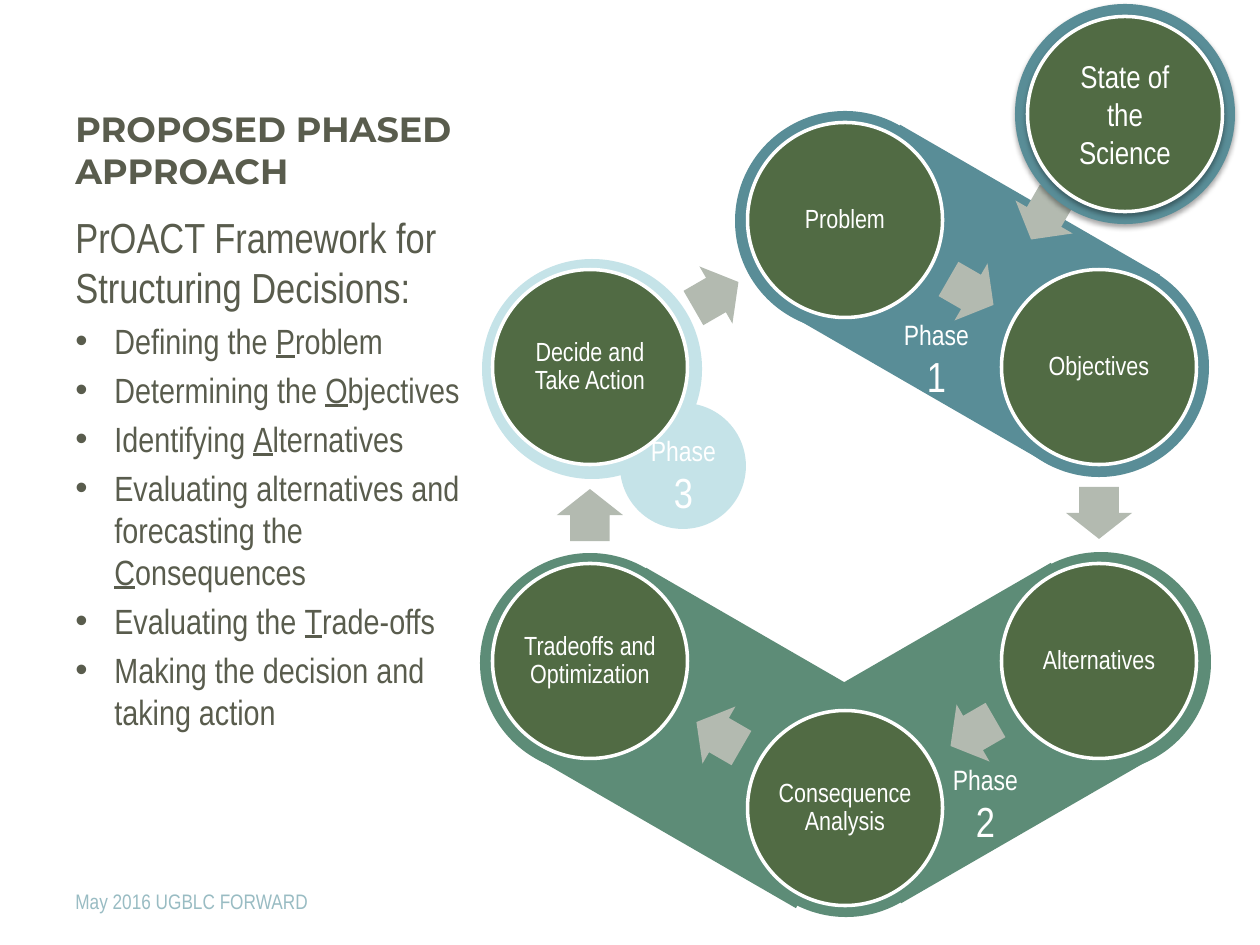
from dataclasses import dataclass

from lxml import etree
from pptx import Presentation
from pptx.dml.color import RGBColor
from pptx.enum.shapes import MSO_SHAPE
from pptx.enum.text import MSO_ANCHOR, MSO_AUTO_SIZE, PP_ALIGN
from pptx.oxml.ns import qn
from pptx.util import Emu, Pt

OVAL, RECT, ARROW = MSO_SHAPE.OVAL, MSO_SHAPE.RECTANGLE, MSO_SHAPE.RIGHT_ARROW
TOP, MIDDLE, BOTTOM = MSO_ANCHOR.TOP, MSO_ANCHOR.MIDDLE, MSO_ANCHOR.BOTTOM
LEFT, CENTER = PP_ALIGN.LEFT, PP_ALIGN.CENTER
FIT_SHAPE = MSO_AUTO_SIZE.SHAPE_TO_FIT_TEXT

PX = 914400 / 126
COLORS = {
    "ink": "595C4D", "footer": "99BCC3", "white": "FFFFFF", "step": "516B44",
    "arrow": "B3BAB0", "phase1": "598D97", "phase2": "5D8C77", "phase3": "C5E3E8",
}
BODY_FONT, TITLE_FONT = "Arial Narrow", "Montserrat"
STEP_SIZE, HALO_SIZE, BUBBLE_SIZE = 195, 220, 126
BAND_LENGTH = 300
ARROW_WIDTH, ARROW_HEIGHT = 52, 66
LABEL_WIDTH, LABEL_HEIGHT = 91, 97
BULLET_INDENT = 39


@dataclass(frozen=True)
class Paragraph:
    """Runs at odd positions are underlined."""
    runs: tuple[str, ...]
    size: int
    bullet: bool = False
    before: float = 0


@dataclass(frozen=True)
class Piece:
    """A plain shape placed by its centre."""
    kind: int
    x: int
    y: int
    width: int
    height: int
    color: str
    angle: int = 0


@dataclass(frozen=True)
class Step:
    text: str
    x: int
    y: int


@dataclass(frozen=True)
class PhaseLabel:
    number: str
    x: int
    y: int


def halo(x: int, y: int, color: str, size: int = HALO_SIZE) -> Piece:
    return Piece(OVAL, x, y, size, size, color)


def band(x: int, y: int, color: str, angle: int) -> Piece:
    return Piece(RECT, x, y, BAND_LENGTH, HALO_SIZE, color, angle)


def arrow(x: int, y: int, angle: int) -> Piece:
    return Piece(ARROW, x, y, ARROW_WIDTH, ARROW_HEIGHT, "arrow", angle)


PHASE_BACKDROPS = [
    halo(683, 466, "phase3", BUBBLE_SIZE),
    band(976, 733, "phase2", 150),
    halo(1101, 662, "phase2"),
    halo(846, 807, "phase2"),
    band(975, 295, "phase1", 30),
    halo(1099, 367, "phase1"),
    halo(845, 221, "phase1"),
    band(721, 738, "phase2", 30),
    halo(590, 663, "phase2"),
    halo(592, 369, "phase3"),
]
PHASE_LABELS = [
    PhaseLabel("1", 936, 359),
    PhaseLabel("2", 985, 804),
    PhaseLabel("3", 683, 475),
]
SCIENCE = Step("State of the Science", 1125, 114)
SCIENCE_ARROW = arrow(1044, 217, 120)
STEPS = [
    Step("Problem", 845, 220),
    Step("Objectives", 1099, 367),
    Step("Alternatives", 1099, 661),
    Step("Consequence Analysis", 845, 808),
    Step("Tradeoffs and Optimization", 590, 661),
    Step("Decide and Take Action", 590, 367),
]
STEP_ARROWS = [
    arrow(971, 292, 30), arrow(1099, 513, 90), arrow(973, 733, 150),
    arrow(719, 735, 210), arrow(590, 515, 270), arrow(716, 295, 330),
]
FRAMEWORK = [
    ("Defining the ", "P", "roblem"),
    ("Determining the ", "O", "bjectives"),
    ("Identifying ", "A", "lternatives"),
    ("Evaluating alternatives and forecasting the ", "C", "onsequences"),
    ("Evaluating the ", "T", "rade-offs"),
    ("Making the decision and taking action",),
]


def px(length: float) -> Emu:
    return Emu(round(length * PX))


def rgb(color: str) -> RGBColor:
    return RGBColor.from_string(COLORS[color])


def write_text(frame, paragraphs: list[Paragraph], *, color: str = "white",
               font: str = BODY_FONT, bold: bool = False, align=CENTER,
               anchor=MIDDLE, wrap: bool = True, inset: int | None = None,
               line_spacing: float | None = None) -> None:
    frame.word_wrap = wrap
    frame.vertical_anchor = anchor
    if inset is not None:
        frame.margin_left = frame.margin_right = px(inset)
        frame.margin_top = frame.margin_bottom = px(inset)
    for index, content in enumerate(paragraphs):
        paragraph = frame.add_paragraph() if index else frame.paragraphs[0]
        paragraph.alignment = align
        paragraph.space_before = Pt(content.before)
        if line_spacing:
            paragraph.line_spacing = line_spacing
        if content.bullet:
            properties = paragraph._p.get_or_add_pPr()
            properties.set("marL", str(px(BULLET_INDENT)))
            properties.set("indent", str(-px(BULLET_INDENT)))
            etree.SubElement(properties, qn("a:buFont"), typeface="Arial")
            etree.SubElement(properties, qn("a:buChar"), char="•")
        for position, text in enumerate(content.runs):
            run = paragraph.add_run()
            run.text = text
            run.font.name, run.font.size, run.font.bold = font, Pt(content.size), bold
            run.font.color.rgb = rgb(color)
            if position % 2:
                run.font.underline = True


def add_box(slide, left: int, top: int, width: int, height: int,
            paragraphs: list[Paragraph], **text_format):
    box = slide.shapes.add_textbox(px(left), px(top), px(width), px(height))
    write_text(box.text_frame, paragraphs, **text_format)
    return box


def draw_piece(slide, piece: Piece):
    shape = slide.shapes.add_shape(
        piece.kind, px(piece.x - piece.width / 2), px(piece.y - piece.height / 2),
        px(piece.width), px(piece.height))
    shape.shadow.inherit = False
    shape.fill.solid()
    shape.fill.fore_color.rgb = rgb(piece.color)
    shape.line.fill.background()
    shape.rotation = piece.angle
    if piece.kind == ARROW:
        shape.adjustments[0], shape.adjustments[1] = 0.6, 0.5
    return shape


def draw_step(slide, step: Step, size: int = 15, **text_format):
    circle = draw_piece(slide, halo(step.x, step.y, "step", STEP_SIZE))
    circle.line.color.rgb = rgb("white")
    circle.line.width = Pt(2)
    write_text(circle.text_frame, [Paragraph((step.text,), size)], **text_format)
    return circle


def add_shadow(shape) -> None:
    effects = shape._element.spPr.find(qn("a:effectLst"))
    shadow = etree.SubElement(effects, qn("a:outerShdw"), blurRad=str(Pt(3.1)),
                              dist=str(Pt(1.8)), dir="5400000", rotWithShape="0")
    black = etree.SubElement(shadow, qn("a:srgbClr"), val="000000")
    etree.SubElement(black, qn("a:alpha"), val="35000")


def main() -> None:
    deck = Presentation()
    deck.slide_width, deck.slide_height = px(1260), px(945)
    slide = deck.slides.add_slide(deck.slide_layouts[6])

    for backdrop in PHASE_BACKDROPS:
        draw_piece(slide, backdrop)

    add_box(slide, 63, 38, 415, 160, [Paragraph(("PROPOSED PHASED APPROACH",), 20)],
            color="ink", font=TITLE_FONT, bold=True, align=LEFT, anchor=BOTTOM)
    framework = [Paragraph(("PrOACT Framework for Structuring Decisions:",), 24)]
    framework += [Paragraph(runs, 20, bullet=True, before=4) for runs in FRAMEWORK]
    add_box(slide, 63, 205, 415, 646, framework, color="ink", align=LEFT, anchor=TOP)
    add_box(slide, 63, 876, 399, 50, [Paragraph(("May 2016 UGBLC FORWARD",), 12)],
            color="footer", align=LEFT)

    for label in PHASE_LABELS:
        box = add_box(slide, label.x - LABEL_WIDTH // 2, label.y - LABEL_HEIGHT // 2,
                      LABEL_WIDTH, LABEL_HEIGHT,
                      [Paragraph(("Phase",), 16), Paragraph((label.number,), 24)],
                      anchor=TOP, wrap=False)
        box.text_frame.auto_size = FIT_SHAPE

    draw_piece(slide, SCIENCE_ARROW)
    add_shadow(draw_piece(slide, halo(SCIENCE.x, SCIENCE.y, "phase1")))
    add_shadow(draw_step(slide, SCIENCE, size=18))

    for step, next_arrow in zip(STEPS, STEP_ARROWS):
        draw_step(slide, step, inset=2, line_spacing=0.9)
        draw_piece(slide, next_arrow)

    deck.save("out.pptx")


if __name__ == "__main__":
    main()
